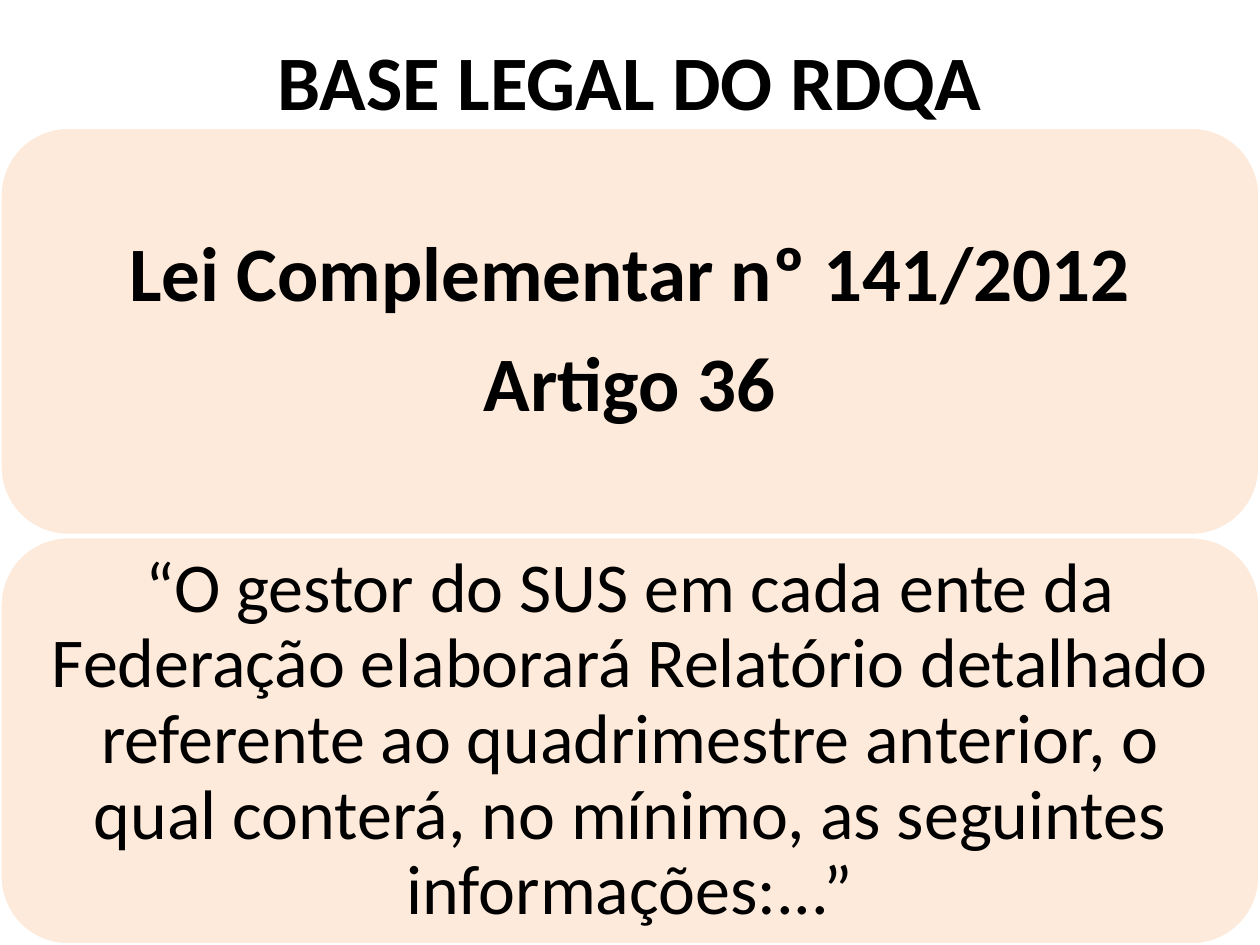
from pptx import Presentation
from pptx.dml.color import RGBColor
from pptx.enum.shapes import MSO_SHAPE
from pptx.enum.text import MSO_ANCHOR, PP_ALIGN
from pptx.util import Pt

TITLE = "BASE LEGAL DO RDQA"
PANELS = [
    {"lines": ["Lei Complementar nº 141/2012", "Artigo 36"],
     "size": 44, "bold": True, "inset": 13},
    {"lines": ["“O gestor do SUS em cada ente da Federação elaborará Relatório "
               "detalhado referente ao quadrimestre anterior, o qual conterá, "
               "no mínimo, as seguintes informações:...”"],
     "size": 40, "bold": False, "inset": 12},
]
COLORS = {"text": "000000", "panel": "FDEADA", "border": "FFFFFF"}
PAGE_WIDTH, PAGE_HEIGHT = 720, 540
PANEL_TOP, PANEL_HEIGHT = 72.7, 233.3


def color(name):
    return RGBColor.from_string(COLORS[name])


def write(box, lines, size, bold=False, spacing=1.0, after=0,
          inset_x=7.2, inset_y=3.6):
    frame = box.text_frame
    frame.word_wrap = True
    frame.vertical_anchor = MSO_ANCHOR.MIDDLE
    frame.margin_left = frame.margin_right = Pt(inset_x)
    frame.margin_top = frame.margin_bottom = Pt(inset_y)
    for index, line in enumerate(lines):
        para = frame.paragraphs[0] if index == 0 else frame.add_paragraph()
        para.alignment = PP_ALIGN.CENTER
        para.line_spacing = spacing
        para.space_before = Pt(0)
        para.space_after = Pt(after)
        span = para.add_run()
        span.text = line
        span.font.name = "Calibri"
        span.font.size = Pt(size)
        span.font.bold = bold
        span.font.color.rgb = color("text")


def add_panel(page, top, lines, size, bold, inset):
    panel = page.shapes.add_shape(MSO_SHAPE.ROUNDED_RECTANGLE, Pt(0), Pt(top),
                                  Pt(PAGE_WIDTH), Pt(PANEL_HEIGHT))
    panel.shadow.inherit = False
    panel.fill.solid()
    panel.fill.fore_color.rgb = color("panel")
    panel.line.color.rgb = color("border")
    panel.line.width = Pt(2)
    write(panel, lines, size, bold, spacing=0.9, after=round(size * 0.35, 1),
          inset_x=inset, inset_y=inset)


def main():
    deck = Presentation()
    deck.slide_width, deck.slide_height = Pt(PAGE_WIDTH), Pt(PAGE_HEIGHT)
    page = deck.slides.add_slide(deck.slide_layouts[5])

    title = page.shapes.title
    title.left, title.top = Pt(0), Pt(15)
    title.width, title.height = Pt(PAGE_WIDTH), Pt(60.6)
    write(title, [TITLE], 44, bold=True)

    pitch = PAGE_HEIGHT - PANEL_HEIGHT - PANEL_TOP
    for index, panel in enumerate(PANELS):
        add_panel(page, PANEL_TOP + index * pitch, **panel)

    deck.save("out.pptx")


if __name__ == "__main__":
    main()
